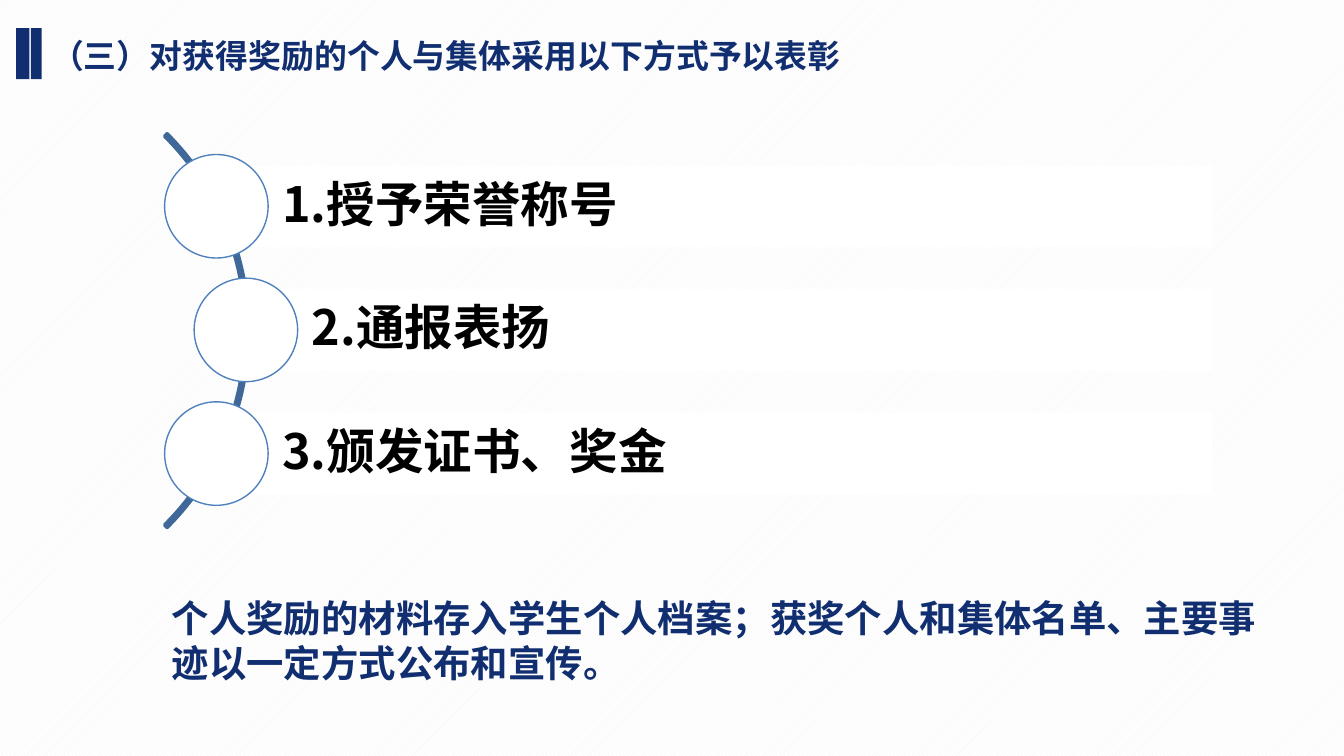
from dataclasses import dataclass

import pptx
import pptx.dml.color
import pptx.enum.dml
import pptx.enum.shapes
import pptx.enum.text
import pptx.oxml.ns
import pptx.util
from lxml import etree

Inches = pptx.util.Inches
RGBColor = pptx.dml.color.RGBColor
MSO_SHAPE = pptx.enum.shapes.MSO_SHAPE
MSO_ANCHOR = pptx.enum.text.MSO_ANCHOR

NAVY = RGBColor(0x11, 0x2F, 0x70)
ARC_BLUE = RGBColor(0x3F, 0x67, 0x97)
RING_BLUE = RGBColor(0x4F, 0x81, 0xBD)
WHITE = RGBColor(0xFF, 0xFF, 0xFF)
STRIPE = RGBColor(0xF2, 0xF2, 0xF2)
BLACK = RGBColor(0, 0, 0)
FONT = "Noto Sans CJK SC"

ROW_TOP = 1.23
ROW_STEP = 0.92
ROW_HEIGHT = 0.61
ROW_RIGHT = 9.02
CIRCLE = 0.77


@dataclass
class Award:
    text: str
    left: float


AWARDS = [
    Award("1.授予荣誉称号", 1.61),
    Award("2.通报表扬", 1.83),
    Award("3.颁发证书、奖金", 1.61),
]


def set_text(sp, text, size, color, anchor=MSO_ANCHOR.TOP, spacing=None,
             insets=(0.1, 0.05, 0.1, 0.05)):
    tf = sp.text_frame
    tf.word_wrap = True
    tf.auto_size = pptx.enum.text.MSO_AUTO_SIZE.NONE
    tf.vertical_anchor = anchor
    tf.margin_left, tf.margin_top, tf.margin_right, tf.margin_bottom = map(Inches, insets)
    p = tf.paragraphs[0]
    p.alignment = pptx.enum.text.PP_ALIGN.LEFT
    p.line_spacing = spacing
    r = p.add_run()
    r.text = text
    r.font.size = pptx.util.Pt(size)
    r.font.bold = True
    r.font.color.rgb = color
    r.font.name = FONT
    ea = etree.SubElement(r.font._element, pptx.oxml.ns.qn("a:ea"))
    ea.set("typeface", FONT)


def add_shape(s, kind, left: float, top: float, width: float, height: float,
              fill=None, line=None, line_width: float = 0.75):
    sp = s.shapes.add_shape(kind, *map(Inches, (left, top, width, height)))
    sp.shadow.inherit = False
    if fill is None:
        sp.fill.background()
    else:
        sp.fill.solid()
        sp.fill.fore_color.rgb = fill
    if line is None:
        sp.line.fill.background()
    else:
        sp.line.color.rgb = line
        sp.line.width = pptx.util.Pt(line_width)
    return sp


def add_award(s, award: Award, index: int) -> None:
    top = ROW_TOP + index * ROW_STEP
    bar = add_shape(s, MSO_SHAPE.RECTANGLE, award.left, top,
                    ROW_RIGHT - award.left, ROW_HEIGHT, WHITE)
    set_text(bar, award.text, 26, BLACK, anchor=MSO_ANCHOR.MIDDLE, spacing=0.9,
             insets=(0.49, 0.07, 0.07, 0.07))
    add_shape(s, MSO_SHAPE.OVAL, award.left - CIRCLE / 2,
              top + (ROW_HEIGHT - CIRCLE) / 2, CIRCLE, CIRCLE, WHITE, RING_BLUE)


def main() -> None:
    prs = pptx.Presentation()
    prs.slide_width = Inches(10)
    prs.slide_height = prs.slide_width * 9 // 16
    s = prs.slides.add_slide(prs.slide_layouts[5])

    fill = s.background.fill
    fill.patterned()
    fill.pattern = pptx.enum.dml.MSO_PATTERN.LIGHT_UPWARD_DIAGONAL
    fill.fore_color.rgb = STRIPE
    fill.back_color.rgb = WHITE

    title = s.shapes.title
    title.left, title.top, title.width, title.height = map(Inches, (0.28, 0.21, 6.85, 0.4))
    set_text(title, "（三）对获得奖励的个人与集体采用以下方式予以表彰", 17.6, NAVY,
             anchor=MSO_ANCHOR.MIDDLE)

    for left, width in ((0.12, 0.1), (0.23, 0.08)):
        add_shape(s, MSO_SHAPE.RECTANGLE, left, 0.21, width, 0.38, NAVY)

    note = s.shapes.add_textbox(*map(Inches, (1.18, 4.38, 8.27, 0.77)))
    set_text(note, "个人奖励的材料存入学生个人档案；获奖个人和集体名单、主要事迹以一定方式公布和宣传。",
             20, NAVY, spacing=pptx.util.Pt(24))

    arc = add_shape(s, MSO_SHAPE.BLOCK_ARC, -2.29, 0.39, 4.14, 4.14,
                    line=ARC_BLUE, line_width=2)
    arc.adjustments[0] = 189
    arc.adjustments[1] = 27
    arc.adjustments[2] = 0.6 / 100

    for index, award in enumerate(AWARDS):
        add_award(s, award, index)

    prs.save("out.pptx")


if __name__ == "__main__":
    main()
